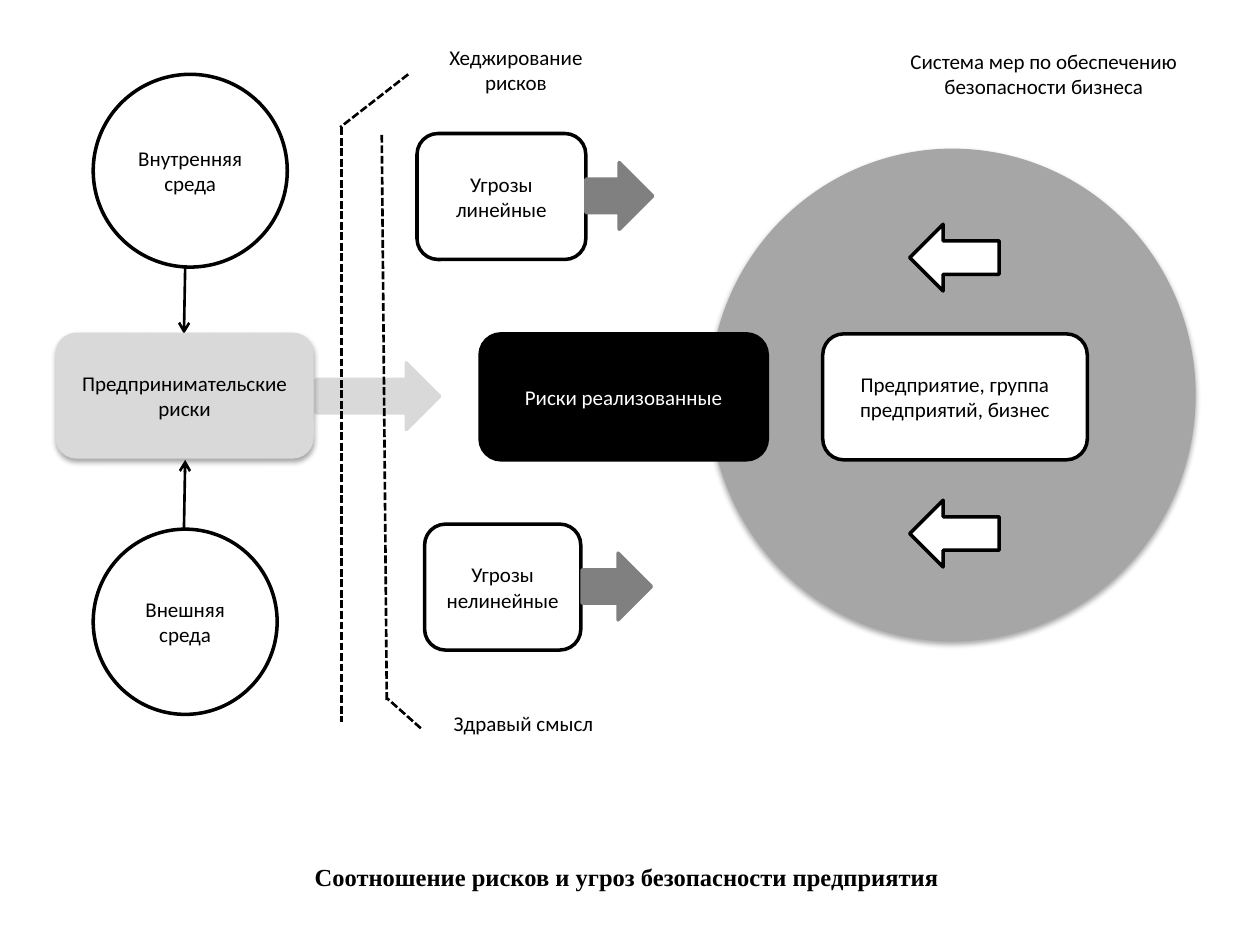
from dataclasses import dataclass

from lxml import etree
from pptx import Presentation
from pptx import util as u
from pptx.dml.color import RGBColor
from pptx.enum import dml, shapes, text
from pptx.oxml.ns import qn

PX = 9144  # EMU in one px, 100 px to the inch
KIND = shapes.MSO_SHAPE


@dataclass(frozen=True)
class Theme:
    white: str = "FFFFFF"
    black: str = "000000"
    pale: str = "D9D9D9"
    gray: str = "A6A6A6"
    dark: str = "808080"
    font: str = "Calibri"
    serif: str = "Times New Roman"
    body: int = 12
    title: int = 14
    edge: float = 2
    rule: float = 1.5


def add(parent, tag, **attrs):
    """Append a drawing element with the given attributes."""
    node = etree.SubElement(parent, qn(tag))
    for name, value in attrs.items():
        node.set(name, str(value))
    return node


class Board:
    def __init__(self, slide, theme):
        self.slide = slide
        self.theme = theme

    def letter(self, shape, words, font, size, color, bold=False):
        """Set centred text in the shape."""
        frame = shape.text_frame
        frame.text = words
        frame.word_wrap = True
        frame.auto_size = text.MSO_AUTO_SIZE.NONE
        frame.vertical_anchor = text.MSO_ANCHOR.MIDDLE
        for para in frame.paragraphs:
            para.alignment = text.PP_ALIGN.CENTER
            for run in para.runs:
                run.font.name = font
                run.font.size = u.Pt(size)
                run.font.bold = bold
                run.font.color.rgb = RGBColor.from_string(color)

    def shape(self, kind, box, fill, edge=None, words="", color=None):
        item = self.slide.shapes.add_shape(kind, *(n * PX for n in box))
        item.shadow.inherit = False
        item.fill.solid()
        item.fill.fore_color.rgb = RGBColor.from_string(fill)
        if edge:
            item.line.color.rgb = RGBColor.from_string(edge)
            item.line.width = u.Pt(self.theme.edge)
        else:
            item.line.fill.background()
        if words:
            self.letter(item, words, self.theme.font, self.theme.body,
                        color or self.theme.black)
        return item

    def node(self, kind, box, words=""):
        """Add a white shape with a black outline."""
        return self.shape(kind, box, self.theme.white, self.theme.black, words)

    def label(self, box, words):
        white = self.theme.white
        return self.shape(KIND.RECTANGLE, box, white, white, words)

    def shade(self, item):
        """Give the shape a soft shadow straight below it."""
        effects = item.element.spPr.find(qn("a:effectLst"))
        outer = add(effects, "a:outerShdw", blurRad=u.Pt(3.1), dist=u.Pt(1.8),
                    dir=90 * 60000, rotWithShape=0)
        tint = add(outer, "a:srgbClr", val=self.theme.black)
        add(tint, "a:alpha", val=35000)

    def line(self, start, end, dash=False):
        """Add a dashed rule, or a solid line with an arrowhead."""
        ends = (n * PX for n in (*start, *end))
        item = self.slide.shapes.add_connector(shapes.MSO_CONNECTOR.STRAIGHT, *ends)
        item.line.color.rgb = RGBColor.from_string(self.theme.black)
        item.line.width = u.Pt(self.theme.rule)
        props = item.element.spPr
        if dash:
            item.line.dash_style = dml.MSO_LINE.SQUARE_DOT
        else:
            add(props.find(qn("a:ln")), "a:tailEnd", type="arrow")
        add(props, "a:effectLst")

    def title(self, box, words):
        item = self.slide.shapes.title
        item.left, item.top, item.width, item.height = (n * PX for n in box)
        self.letter(item, words, self.theme.serif, self.theme.title,
                    self.theme.black, bold=True)


def main():
    deck = Presentation()
    deck.slide_width, deck.slide_height = u.Inches(10), u.Inches(7.5)
    look = Theme()
    board = Board(deck.slides.add_slide(deck.slide_layouts[5]), look)

    board.title((220, 663, 555, 66),
                "Соотношение рисков и угроз безопасности предприятия")

    # Business and its protective measures
    board.shape(KIND.RIGHT_ARROW, (251, 288, 98, 53), look.pale, look.pale)
    board.shade(board.shape(KIND.OVAL, (563, 118, 386, 391), look.gray))
    board.label((702, 23, 253, 71),
                "Система мер по обеспечению безопасности бизнеса")
    for top in (178, 397):
        board.node(KIND.LEFT_ARROW, (722, top, 71, 53))

    # Sources of risk
    board.node(KIND.OVAL, (74, 59, 154, 153), "Внутренняя среда")
    board.node(KIND.OVAL, (74, 420, 146, 147), "Внешняя среда")
    board.line((147, 212), (146, 265))
    board.line((146, 420), (147, 365))
    board.shade(board.shape(KIND.ROUNDED_RECTANGLE, (44, 264, 205, 100),
                            look.pale, words="Предпринимательские риски"))

    # Barriers, each with a lead to its label
    board.label((332, 22, 155, 66), "Хеджирование рисков")
    board.label((338, 541, 155, 66), "Здравый смысл")
    for start, end in (
        ((271, 101), (271, 573)),
        ((324, 59), (270, 101)),
        ((303, 107), (307, 556)),
        ((334, 578), (307, 554)),
    ):
        board.line(start, end, dash=True)

    # Threats and outcomes
    for box, words in (
        ((653, 265, 210, 100), "Предприятие, группа предприятий, бизнес"),
        ((331, 106, 134, 100), "Угрозы линейные"),
        ((337, 416, 124, 100), "Угрозы нелинейные"),
    ):
        board.node(KIND.ROUNDED_RECTANGLE, box, words)
    for box in ((465, 129, 53, 53), (462, 439, 55, 53)):
        board.shape(KIND.RIGHT_ARROW, box, look.dark, look.dark)
    board.shape(KIND.ROUNDED_RECTANGLE, (381, 265, 228, 100), look.black,
                look.black, "Риски реализованные", look.white)

    deck.save("out.pptx")


if __name__ == "__main__":
    main()
